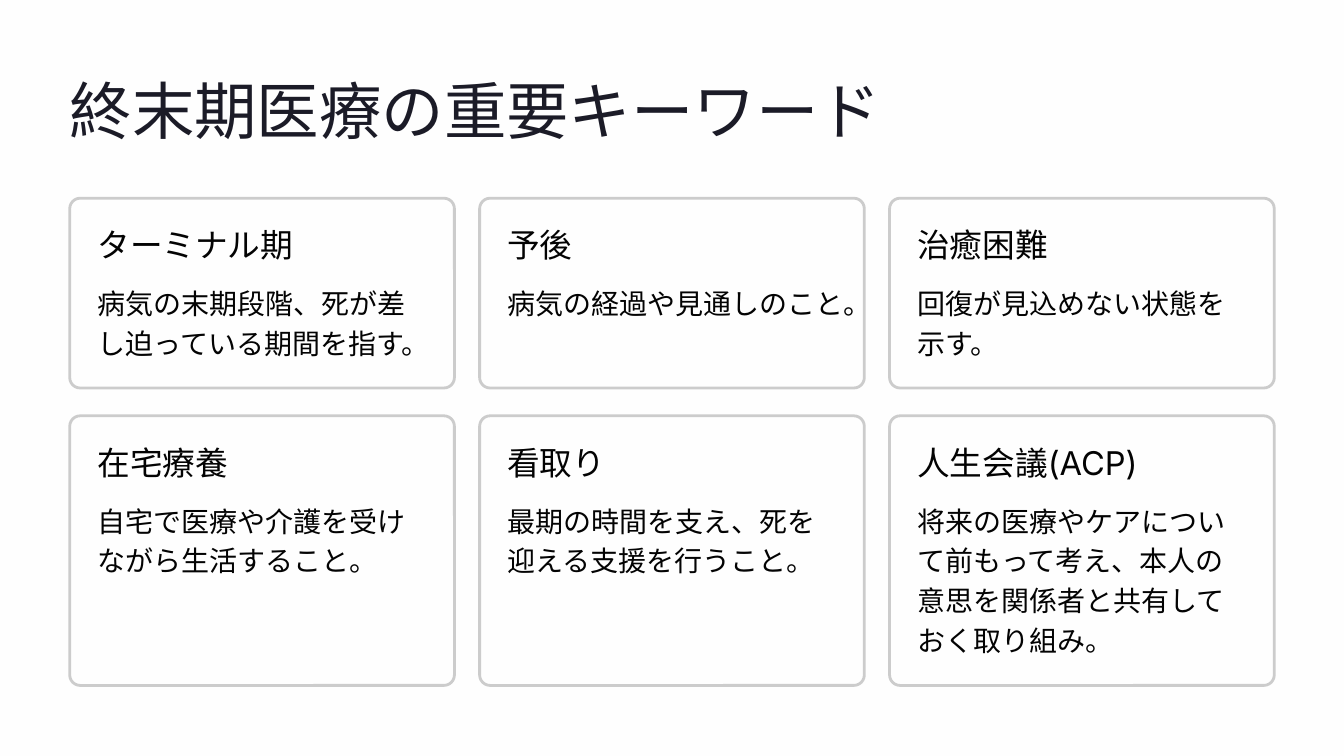
from lxml import etree
from pptx import Presentation
from pptx.dml.color import RGBColor
from pptx.enum.shapes import MSO_SHAPE
from pptx.enum.text import MSO_ANCHOR, MSO_AUTO_SIZE, PP_ALIGN
from pptx.oxml.ns import qn
from pptx.util import Inches, Pt

ROUNDED = MSO_SHAPE.ROUNDED_RECTANGLE
TOP = MSO_ANCHOR.TOP
LEFT = PP_ALIGN.LEFT
NO_AUTOFIT = MSO_AUTO_SIZE.NONE

TITLE_LAYOUT = 5
MARGIN, COLUMN_STEP, CARD_WIDTH = 0.83, 4.88, 4.58
PADDING, BODY_OFFSET, CORNER = 0.33, 0.98, 0.125
HEADING_FORMAT = {"size": 28, "line": 33, "font": "Inter", "wrap": False}
BODY_FORMAT = {"size": 24, "line": 34, "font": "Cabin"}

# Each row: top, card height, then (heading, body, body wraps)
ROWS = [
    (2.36, 2.26, [
        ("ターミナル期", "病気の末期段階、死が差し迫っている期間を指す。", True),
        ("予後", "病気の経過や見通しのこと。", False),
        ("治癒困難", "回復が見込めない状態を示す。", True),
    ]),
    (4.95, 3.21, [
        ("在宅療養", "自宅で医療や介護を受けながら生活すること。", True),
        ("看取り", "最期の時間を支え、死を迎える支援を行うこと。", True),
        ("人生会議(ACP)", "将来の医療やケアについて前もって考え、"
         "本人の意思を関係者と共有しておく取り組み。", True),
    ]),
]


def color(hex_string):
    return RGBColor.from_string(hex_string)


def write(box, text, *, size, line, font, wrap=True, ink="030303"):
    """Fill a text-holding shape with one formatted paragraph."""
    frame = box.text_frame
    frame.margin_left = frame.margin_right = 0
    frame.margin_top = frame.margin_bottom = 0
    frame.auto_size = NO_AUTOFIT
    frame.vertical_anchor = TOP
    frame.word_wrap = wrap
    para = frame.paragraphs[0]
    para.alignment = LEFT
    para.line_spacing = Pt(line)
    span = para.add_run()
    span.text = text
    span.font.size = Pt(size)
    span.font.name = font
    span.font.color.rgb = color(ink)


def add_title(page, text):
    title = page.shapes.title
    title.left, title.top = Inches(MARGIN), Inches(0.83)
    title.width, title.height = Inches(9.68), Inches(0.93)
    write(title, text, size=53.5, line=66.5, font="Inter", wrap=False, ink="1B1B27")


def add_text(page, text, left, top, width, height, **text_format):
    box = page.shapes.add_textbox(
        Inches(left), Inches(top), Inches(width), Inches(height))
    write(box, text, **text_format)


def add_panel(page, left, top, height):
    panel = page.shapes.add_shape(
        ROUNDED, Inches(left), Inches(top), Inches(CARD_WIDTH), Inches(height))
    panel.adjustments[0] = CORNER / min(CARD_WIDTH, height)
    panel.shadow.inherit = False
    panel.fill.solid()
    panel.fill.fore_color.rgb = color("FFFFFF")
    fill_color = panel.fill._xPr.find(qn("a:solidFill"))[0]
    etree.SubElement(fill_color, qn("a:alpha")).set("val", "95000")
    panel.line.color.rgb = color("CCCCCC")
    panel.line.width = Pt(2.4)


def add_card(page, left, top, height, heading, body, wraps):
    add_panel(page, left, top, height)
    text_left = left + PADDING
    add_text(page, heading, text_left, top + PADDING, 3.72, 0.47, **HEADING_FORMAT)
    add_text(page, body, text_left, top + BODY_OFFSET, CARD_WIDTH - 2 * PADDING,
             height - BODY_OFFSET - PADDING, wrap=wraps, **BODY_FORMAT)


def main():
    deck = Presentation()
    deck.slide_width, deck.slide_height = Inches(16), Inches(9)
    page = deck.slides.add_slide(deck.slide_layouts[TITLE_LAYOUT])
    page.background.fill.solid()
    page.background.fill.fore_color.rgb = color("FEFEFE")
    add_title(page, "終末期医療の重要キーワード")
    for top, height, cards in ROWS:
        for column, card in enumerate(cards):
            add_card(page, MARGIN + column * COLUMN_STEP, top, height, *card)
    deck.save("out.pptx")


if __name__ == "__main__":
    main()
